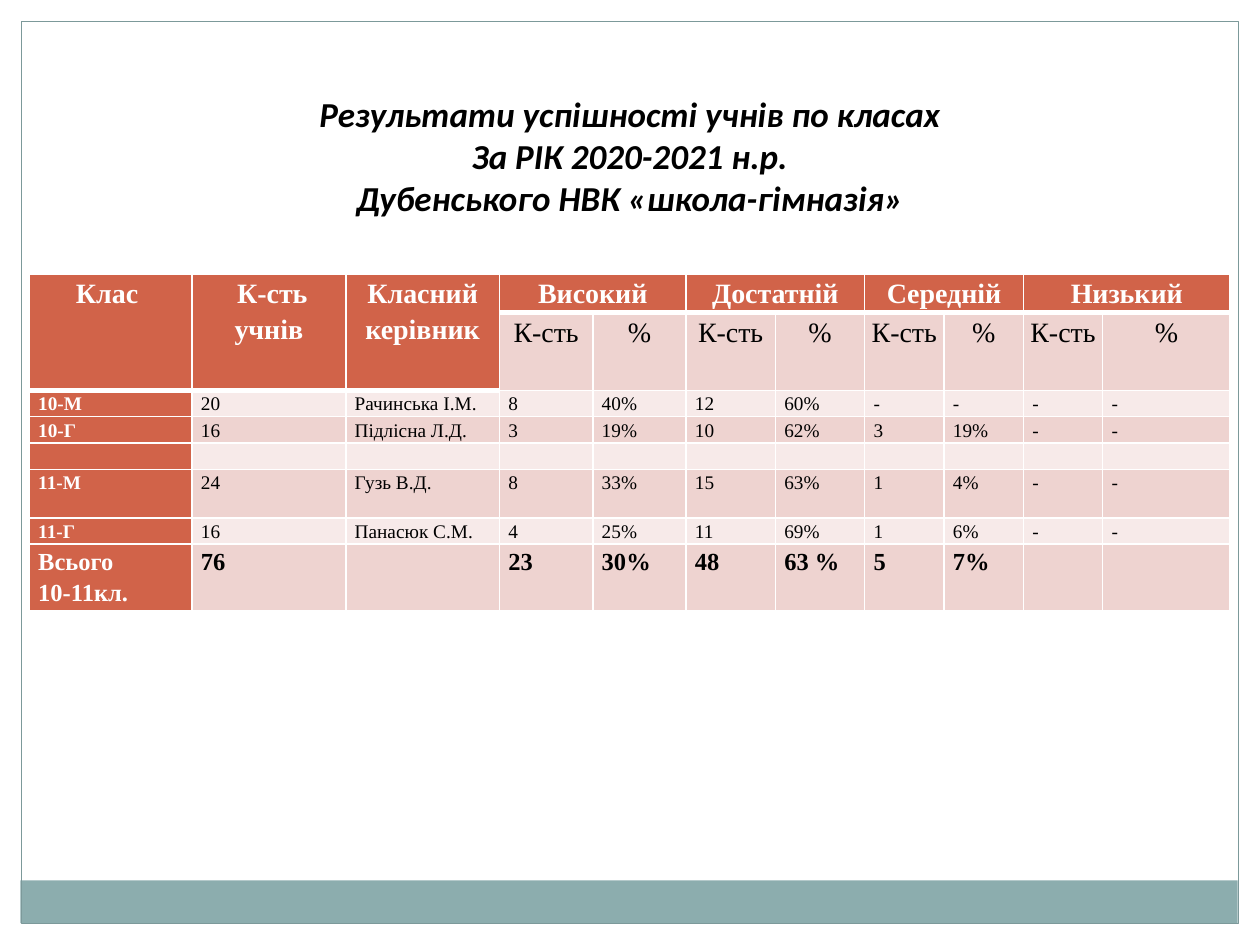
from lxml.etree import SubElement
from pptx import Presentation
from pptx.dml.color import RGBColor
from pptx.enum.shapes import MSO_SHAPE
from pptx.enum.text import MSO_ANCHOR, PP_ALIGN
from pptx.oxml.ns import qn
from pptx.util import Cm, Pt

WHITE = RGBColor(0xFF, 0xFF, 0xFF)
BLACK = RGBColor(0x00, 0x00, 0x00)
TEAL = RGBColor(0x8C, 0xAD, 0xAE)
FRAME = RGBColor(0x7C, 0x99, 0x9A)
RUST = RGBColor(0xD1, 0x63, 0x49)
PINK = RGBColor(0xEE, 0xD3, 0xD0)
PALE = RGBColor(0xF7, 0xEA, 0xE9)

TITLE = ("Результати успішності учнів по класах\n"
         "За РІК 2020-2021 н.р.\n"
         "Дубенського НВК «школа-гімназія»")
LEVELS = ["Високий", "Достатній", "Середній", "Низький"]
ROWS = [
    ["Клас ", " К-сть учнів", "Класний керівник"]
    + [text for level in LEVELS for text in (level, "")],
    ["", "", ""] + ["К-сть", "%"] * len(LEVELS),
    ["10-М", "20", "Рачинська І.М.", "8", "40%", "12", "60%", "-", "-", "-", "-"],
    ["10-Г", "16", "Підлісна Л.Д.", "3", "19%", "10", "62%", "3", "19%", "-", "-"],
    [""] * 11,
    ["11-М", "24", "Гузь В.Д.", "8", "33%", "15", "63%", "1", "4%", "-", "-"],
    ["11-Г", "16", "Панасюк С.М.", "4", "25%", "11", "69%", "1", "6%", "-", "-"],
    ["Всього\n10-11кл.", "76", "", "23", "30%", "48", "63 %", "5", "7%", "", ""],
]
COLUMN_WIDTHS = [3.28, 3.1, 3.1, 1.88, 1.88, 1.8, 1.8, 1.6, 1.6, 1.6, 2.57]
ROW_HEIGHTS = [0.77, 1.57, 0.53, 0.53, 0.53, 0.98, 0.53, 1.35]
HEADER_ROWS = 2
LABEL_COLUMNS = 3
TOTAL_ROW = len(ROWS) - 1


def add_rectangle(page, left, top, width, height, fill=None, line=None):
    box = page.shapes.add_shape(MSO_SHAPE.RECTANGLE, Cm(left), Cm(top), Cm(width), Cm(height))
    box.shadow.inherit = False
    if fill is None:
        box.fill.background()
    else:
        box.fill.solid()
        box.fill.fore_color.rgb = fill
    if line is None:
        box.line.fill.background()
    else:
        box.line.color.rgb = line
        box.line.width = Pt(0.75)


def add_background(page):
    add_rectangle(page, 0, 0, 25.4, 0.43, WHITE)
    for left in (24.97, 0):
        add_rectangle(page, left, 0, 0.43, 19.05, WHITE)
    add_rectangle(page, 0.41, 17.75, 24.54, 0.86, TEAL)
    add_rectangle(page, 0.43, 0.43, 24.54, 18.19, line=FRAME)


def format_font(font, formats):
    for name, value in formats.items():
        if name == "color":
            font.color.rgb = value
        else:
            setattr(font, name, value)


def set_title(page):
    title = page.shapes.title
    title.left, title.top, title.width, title.height = Cm(3.91), Cm(1.73), Cm(17.58), Cm(2.82)
    frame = title.text_frame
    frame.text = TITLE
    frame.word_wrap = True
    frame.vertical_anchor = MSO_ANCHOR.MIDDLE
    for para in frame.paragraphs:
        para.alignment = PP_ALIGN.CENTER
        format_font(para.runs[0].font, {"name": "Calibri", "size": Pt(20), "bold": True,
                                        "italic": True, "color": BLACK})


def set_borders(cell, bottom_width):
    """Draw white borders; they must precede the fill in the cell's XML."""
    properties = cell._tc.get_or_add_tcPr()
    for side, width in (("L", 1), ("R", 1), ("T", 1), ("B", bottom_width)):
        line = SubElement(properties, qn(f"a:ln{side}"), w=str(Pt(width)))
        fill = SubElement(line, qn("a:solidFill"))
        SubElement(fill, qn("a:srgbClr"), val=str(WHITE))


def cell_fill(row, column):
    if row == 0 or column == 0 or (row < HEADER_ROWS and column < LABEL_COLUMNS):
        return RUST
    return PINK if row % 2 else PALE


def font_size(row):
    if row < HEADER_ROWS:
        return Pt(16)
    return Pt(14) if row == TOTAL_ROW else Pt(11)


def format_cell(cell, row, column, text):
    is_header = row < HEADER_ROWS
    fill = cell_fill(row, column)
    ends_header = row == 0 or (is_header and column < LABEL_COLUMNS)
    set_borders(cell, 3 if ends_header else 1)
    cell.fill.solid()
    cell.fill.fore_color.rgb = fill
    side_margin = Cm(0.08 if is_header else 0.18)
    margins = {"margin_left": side_margin, "margin_right": side_margin,
               "margin_top": 0, "margin_bottom": 0}
    for name, value in margins.items():
        setattr(cell, name, value)
    cell.text = text
    size = font_size(row)
    for para in cell.text_frame.paragraphs:
        para.line_spacing = 1.15
        para.alignment = PP_ALIGN.CENTER if is_header else PP_ALIGN.LEFT
        for span in para.runs:
            format_font(span.font, {"name": "Times New Roman", "size": size,
                                    "bold": fill == RUST or row == TOTAL_ROW,
                                    "color": WHITE if fill == RUST else BLACK})
        if not para.runs:
            # Keeps an empty cell from forcing its row taller.
            para._p.get_or_add_endParaRPr().set("sz", str(int(size.pt * 100)))


def add_results_table(page):
    table = page.shapes.add_table(len(ROWS), len(COLUMN_WIDTHS), Cm(0.59), Cm(5.53),
                                  Cm(sum(COLUMN_WIDTHS)), Cm(sum(ROW_HEIGHTS))).table
    table.first_row = table.horz_banding = False
    for column, width in zip(table.columns, COLUMN_WIDTHS):
        column.width = Cm(width)
    for row, height in zip(table.rows, ROW_HEIGHTS):
        row.height = Cm(height)
    for row, texts in enumerate(ROWS):
        for column, text in enumerate(texts):
            format_cell(table.cell(row, column), row, column, text)
    for column in range(LABEL_COLUMNS):
        table.cell(0, column).merge(table.cell(1, column))
    for column in range(LABEL_COLUMNS, len(COLUMN_WIDTHS), 2):
        table.cell(0, column).merge(table.cell(0, column + 1))


def main():
    deck = Presentation()
    deck.slide_width, deck.slide_height = Cm(25.4), Cm(19.05)
    page = deck.slides.add_slide(deck.slide_layouts[5])
    add_background(page)
    set_title(page)
    add_results_table(page)
    deck.save("out.pptx")


if __name__ == "__main__":
    main()
